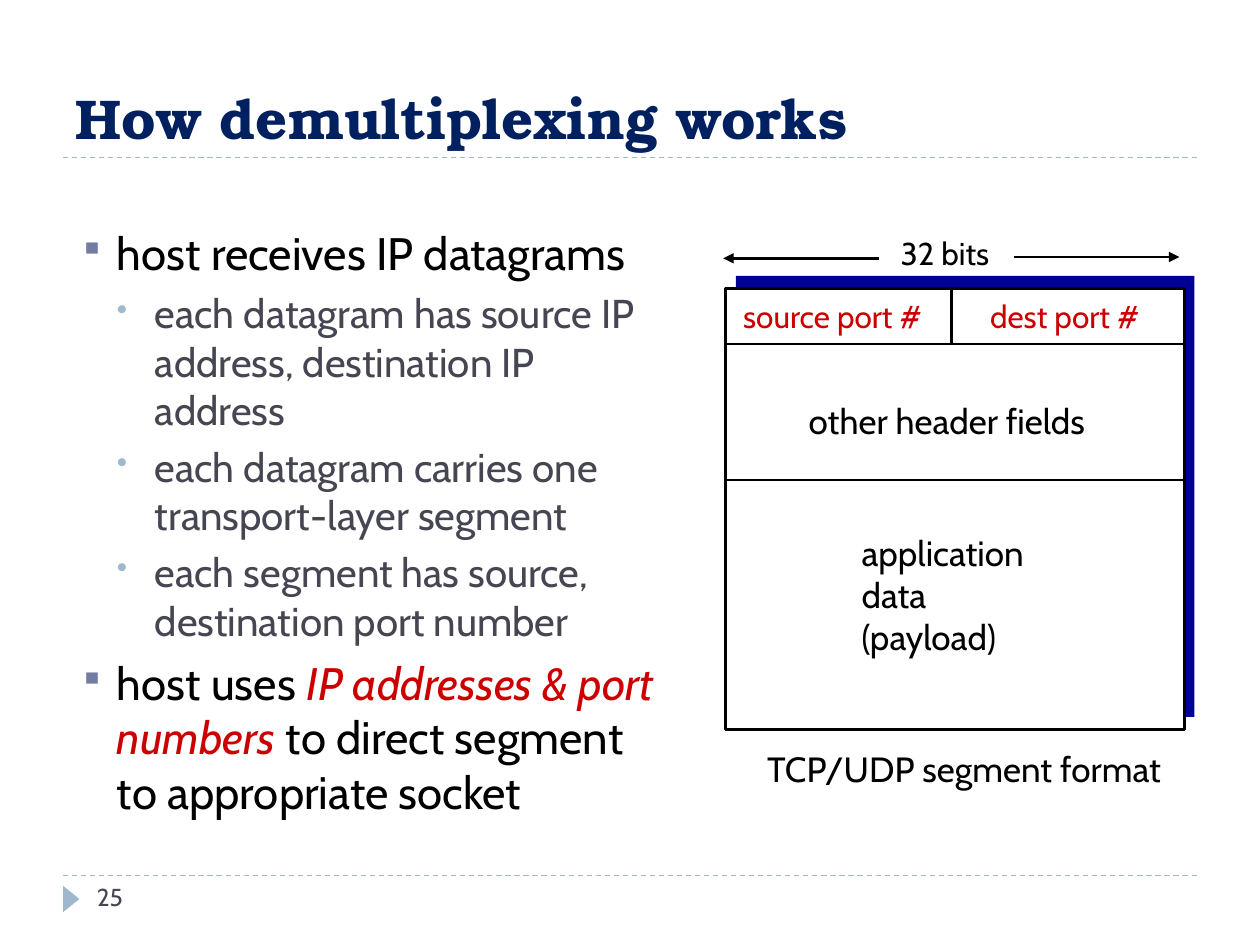
import pptx
import pptx.util
import pptx.dml.color
import pptx.enum.dml
import pptx.enum.shapes
import pptx.enum.text
import pptx.oxml.ns
from lxml import etree

COLORS = {
    "title": "002060", "ink": "000000", "muted": "464653", "accent": "CC0000",
    "rule": "9FB8CD", "bullet": "727CA3", "shade": "000099", "paper": "FFFFFF",
}
BODY_FONT = "Cabin"
TITLE_FONT = "TeX Gyre Bonum"
COLUMNS, ROWS = 100, 75
CELL = pptx.util.Inches(0.1)
LEVELS = [
    {"size": 26, "color": "ink", "sign": "▪", "sign_color": "bullet", "indent": 3, "before": 6},
    {"size": 23, "color": "muted", "sign": "•", "sign_color": "rule", "indent": 6, "before": 5},
]


def grid(*values):
    return [round(value * CELL) for value in values]


def rgb(name):
    return pptx.dml.color.RGBColor.from_string(COLORS[name])


def add_xml(parent, tag, **attributes):
    return etree.SubElement(parent, pptx.oxml.ns.qn(tag), attributes)


def write(paragraph, text, size=20, color="ink", font=BODY_FONT, bold=False, italic=False):
    run = paragraph.add_run()
    run.text = text
    run.font.name = font
    run.font.size = pptx.util.Pt(size)
    run.font.bold = bold
    run.font.italic = italic
    run.font.color.rgb = rgb(color)


def add_text_box(slide, box, wrap=True):
    frame = slide.shapes.add_textbox(*grid(*box)).text_frame
    frame.word_wrap = wrap
    if not wrap:
        frame.auto_size = pptx.enum.text.MSO_AUTO_SIZE.SHAPE_TO_FIT_TEXT
    return frame


def add_label(slide, box, *lines, **text_format):
    frame = add_text_box(slide, box, wrap=False)
    for index, line in enumerate(lines):
        paragraph = frame.add_paragraph() if index else frame.paragraphs[0]
        write(paragraph, line, **text_format)


def add_shape(slide, kind, box, fill, line=None):
    shape = slide.shapes.add_shape(kind, *grid(*box))
    shape.shadow.inherit = False
    shape.fill.solid()
    shape.fill.fore_color.rgb = rgb(fill)
    if line:
        shape.line.color.rgb = rgb(line)
        shape.line.width = pptx.util.Pt(1.5)
    else:
        shape.line.fill.background()
    return shape


def add_line(slide, start, end, color="ink", width=1.5, dashed=False, arrow=False):
    connector = slide.shapes.add_connector(
        pptx.enum.shapes.MSO_CONNECTOR.STRAIGHT, *grid(*start, *end))
    connector.line.color.rgb = rgb(color)
    connector.line.width = pptx.util.Pt(width)
    if dashed:
        connector.line.dash_style = pptx.enum.dml.MSO_LINE.DASH
    if arrow:
        add_xml(connector.line._get_or_add_ln(), "a:tailEnd", type="triangle")
    add_xml(connector._element.spPr, "a:effectLst")


def add_title(slide, box, text):
    left, top, width, height = box
    add_line(slide, (left, top + height), (left + width, top + height),
             color="rule", width=0.75, dashed=True)
    title = slide.shapes.title
    title.left, title.top, title.width, title.height = grid(*box)
    frame = title.text_frame
    frame.vertical_anchor = pptx.enum.text.MSO_ANCHOR.BOTTOM
    paragraph = frame.paragraphs[0]
    paragraph.alignment = pptx.enum.text.PP_ALIGN.LEFT
    write(paragraph, text, size=32, color="title", font=TITLE_FONT, bold=True)


def add_footer(slide, box, number):
    left, top, width, height = box
    add_line(slide, (left, top), (left + width, top), color="rule", width=0.75, dashed=True)
    marker = add_shape(slide, pptx.enum.shapes.MSO_SHAPE.ISOSCELES_TRIANGLE,
                       (left - 0.4, top + 1.2, 2.1, 1.3), "rule")
    marker.rotation = 90
    frame = add_text_box(slide, (left + 1.7, top, 21.7, height))
    write(frame.paragraphs[0], number, size=14, color="muted")


def add_bullets(slide, box, items):
    frame = add_text_box(slide, box)
    for index, (depth, parts) in enumerate(items):
        level = LEVELS[depth]
        paragraph = frame.add_paragraph() if index else frame.paragraphs[0]
        paragraph.level = depth
        properties = paragraph._p.get_or_add_pPr()
        properties.set("marL", str(grid(level["indent"])[0]))
        properties.set("indent", str(grid(-3)[0]))
        sign_color = add_xml(properties, "a:buClr")
        add_xml(sign_color, "a:srgbClr", val=COLORS[level["sign_color"]])
        add_xml(properties, "a:buSzPct", val="76000")
        add_xml(properties, "a:buChar", char=level["sign"])
        if index:
            paragraph.space_before = pptx.util.Pt(level["before"])
        for text, emphasis in parts:
            write(paragraph, text, size=level["size"], italic=emphasis,
                  color="accent" if emphasis else level["color"])


def add_segment_diagram(slide, box):
    left, top, width, height = box
    right, middle = left + width, left + 17.9
    rectangle = pptx.enum.shapes.MSO_SHAPE.RECTANGLE
    add_shape(slide, rectangle, (left + 0.8, top - 1, width, height), "shade")
    add_shape(slide, rectangle, box, "paper", line="ink")
    for row in (4.4, 15.2):
        add_line(slide, (left, top + row), (right, top + row))
    add_line(slide, (middle, top), (middle, top + 4.4))
    add_line(slide, (left + 12.2, top - 2.4), (left - 0.2, top - 2.4), arrow=True)
    add_line(slide, (left + 22.9, top - 2.5), (right - 0.4, top - 2.5), arrow=True)
    add_label(slide, (left + 12.9, top - 4.8, 9.4, 4), "32 bits", size=18)
    add_label(slide, (left + 0.4, top + 0.2, 17.1, 4), "source port #", size=18, color="accent")
    add_label(slide, (left + 20, top + 0.2, 14.5, 4), "dest port #", size=18, color="accent")
    add_label(slide, (left + 5.6, top + 8.3, 25.1, 4.3), "other header fields")
    add_label(slide, (left + 9.8, top + 18.8, 15.2, 11), "application", "data", "(payload)")
    add_label(slide, (left + 2.3, top + height + 0.9, 33.5, 4.3), "TCP/UDP segment format")


def main():
    presentation = pptx.Presentation()
    presentation.slide_width, presentation.slide_height = grid(COLUMNS, ROWS)
    slide = presentation.slides.add_slide(presentation.slide_layouts.get_by_name("Title Only"))
    add_title(slide, (5, 1.7, 90, 10.8), "How demultiplexing works")
    add_bullets(slide, (5.3, 17.4, 48.5, 47.6), [
        (0, [("host receives IP datagrams", False)]),
        (1, [("each datagram has source IP address, destination IP address", False)]),
        (1, [("each datagram carries one transport-layer segment", False)]),
        (1, [("each segment has source, destination port number", False)]),
        (0, [("host uses ", False), ("IP addresses & port numbers", True),
             (" to direct segment to appropriate socket", False)]),
    ])
    add_segment_diagram(slide, (57.6, 22.9, 36.4, 35))
    add_footer(slide, (5, 69.5, 90, 4), "25")
    presentation.save("out.pptx")


if __name__ == "__main__":
    main()
